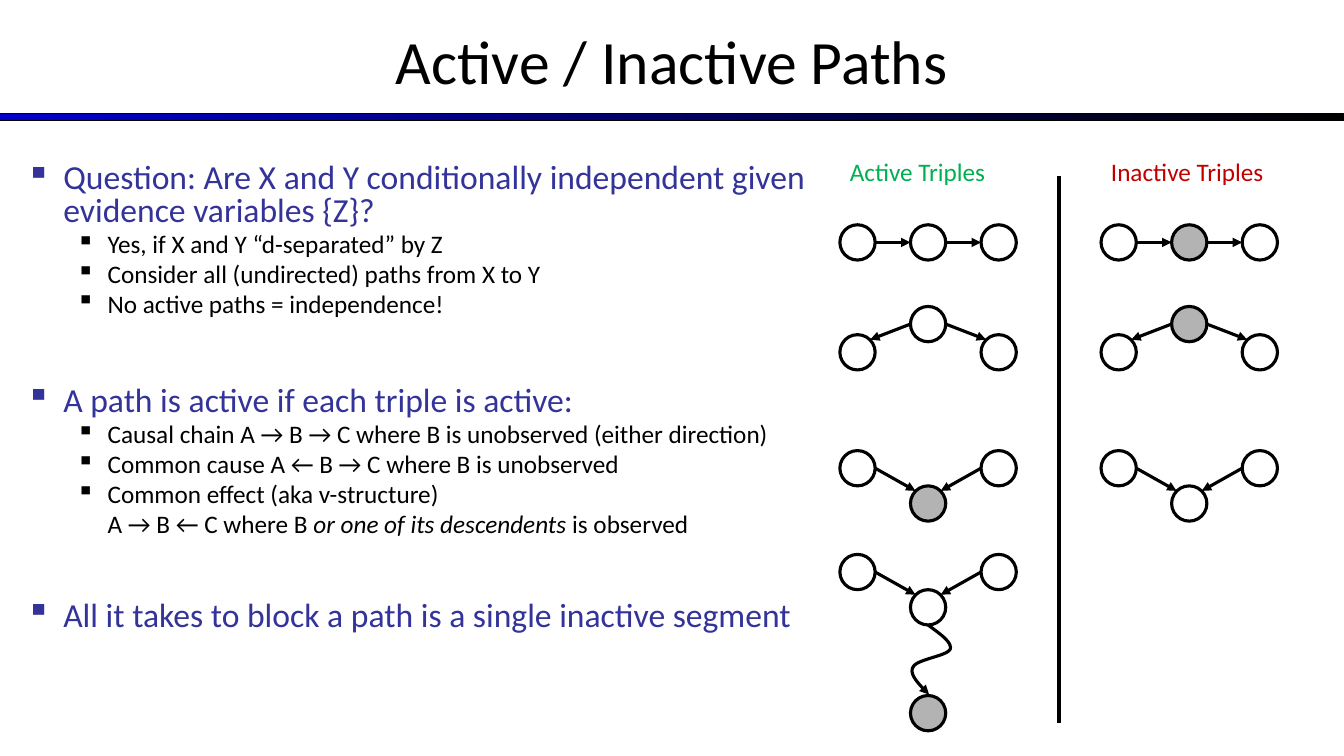
import dataclasses

import lxml.etree
import pptx
import pptx.dml.color
import pptx.enum.dml
import pptx.enum.shapes
import pptx.enum.text
import pptx.oxml
import pptx.oxml.ns
import pptx.util

SHAPE = pptx.enum.shapes.MSO_SHAPE
NODE, PITCH, CORNER = 35, 70, 5
ACTIVE_X, INACTIVE_X = 833, 1092


@dataclasses.dataclass(frozen=True)
class Theme:
    """Colours, font and type sizes of the slide."""
    font: str = "Calibri"
    black: str = "000000"
    white: str = "FFFFFF"
    blue: str = "0000CC"
    heading: str = "333399"
    observed: str = "B3B3B3"
    active: str = "00B050"
    inactive: str = "C00000"
    title_size: int = 44
    heading_size: int = 24
    text_size: int = 18


THEME = Theme()

BODY = [
    (0, "▪", 5, ["Question: Are X and Y conditionally independent given evidence variables {Z}?"]),
    (1, "▪", 4, ["Yes, if X and Y “d-separated” by Z"]),
    (1, "▪", 4, ["Consider all (undirected) paths from X to Y"]),
    (1, "▪", 4, ["No active paths = independence!"]),
    (0, "▪", 49, ["A path is active if each triple is active:"]),
    (1, "▪", 4, ["Causal chain A → B → C where B is unobserved (either direction)"]),
    (1, "▪", 4, ["Common cause A ← B → C where B is unobserved"]),
    (1, "▪", 4, ["Common effect (aka v-structure)"]),
    (1, None, 4, ["A → B ← C where B ", "or one of its descendents", " is observed"]),
    (0, "▪", 45, ["All it takes to block a path is a single inactive segment"]),
]


def px(n):
    """Turn px into EMU, at 100 px to the inch."""
    return pptx.util.Emu(round(n * 9144))


def rgb(color):
    """Return the colour object for a hex string."""
    return pptx.dml.color.RGBColor.from_string(color)


def add_run(p, text, size, color, italic=False):
    """Append one formatted run to a paragraph."""
    r = p.add_run()
    r.text = text
    r.font.name, r.font.size, r.font.italic = THEME.font, pptx.util.Pt(size), italic
    r.font.color.rgb = rgb(color)


def set_insets(tf):
    """Give a text frame wrapping and its even insets."""
    tf.word_wrap = True
    tf.margin_left = tf.margin_right = px(10)
    tf.margin_top = tf.margin_bottom = px(5)


def add_text_box(s, x, y, w, h):
    """Add a wrapping text box and return its frame."""
    tf = s.shapes.add_textbox(px(x), px(y), px(w), px(h)).text_frame
    set_insets(tf)
    return tf


def set_bullet(p, level, char):
    """Set the hanging indent and bullet of a paragraph."""
    margin, hang = ((37, 37), (81, 31))[level]
    ppr = p._p.get_or_add_pPr()
    ppr.set("marL", str(px(margin)))
    ppr.set("indent", str(-px(hang) if char else 0))
    tag = pptx.oxml.ns.qn("a:buChar" if char else "a:buNone")
    bullet = lxml.etree.SubElement(ppr, tag)
    if char:
        bullet.set("char", char)


def style_line(sp, width, arrow=False):
    """Draw a black shadowless line, with an arrowhead at its end if asked."""
    sp.line.color.rgb = rgb(THEME.black)
    sp.line.width = pptx.util.Pt(width)
    if arrow:
        tail = lxml.etree.SubElement(sp.line._get_or_add_ln(), pptx.oxml.ns.qn("a:tailEnd"))
        tail.set("type", "triangle")


def add_line(shapes, start, end, width=2.25, arrow=True):
    """Connect two points with a straight line."""
    c = shapes.add_connector(pptx.enum.shapes.MSO_CONNECTOR.STRAIGHT, *map(px, start + end))
    style_line(c, width, arrow)
    lxml.etree.SubElement(c._element.spPr, pptx.oxml.ns.qn("a:effectLst"))


def add_node(shapes, x, y, observed=False):
    """Add one graph node, grey when observed."""
    sp = shapes.add_shape(SHAPE.OVAL, px(x), px(y), px(NODE), px(NODE))
    sp.shadow.inherit = False
    sp.fill.solid()
    sp.fill.fore_color.rgb = rgb(THEME.observed if observed else THEME.white)
    style_line(sp, 2.25)


def add_triple(s, kind, x, end_y, mid_y, observed):
    """Add three nodes and their arrows as a group, and return its shapes."""
    shapes = s.shapes.add_group_shape().shapes
    for i, y in enumerate((end_y, mid_y, end_y)):
        add_node(shapes, x + i * PITCH, y, observed and i == 1)
    mid_x, right_x, half = x + PITCH, x + 2 * PITCH, NODE / 2
    left_side, right_side = (x + NODE, end_y + half), (right_x, end_y + half)
    mid_left, mid_right = (mid_x, mid_y + half), (mid_x + NODE, mid_y + half)
    if kind == "chain":
        arrows = [(left_side, mid_left), (mid_right, right_side)]
    elif kind == "fork":
        arrows = [(mid_left, (x + NODE - CORNER, end_y + CORNER)),
                  (mid_right, (right_x + CORNER, end_y + CORNER))]
    else:
        arrows = [(left_side, (mid_x + CORNER, mid_y + CORNER)),
                  (right_side, (mid_x + NODE - CORNER, mid_y + CORNER))]
    for start, end in arrows:
        add_line(shapes, start, end)
    return shapes


def bezier(points, t):
    """Return the point at t on a cubic curve."""
    weights = ((1 - t) ** 3, 3 * t * (1 - t) ** 2, 3 * t * t * (1 - t), t ** 3)
    return tuple(px(sum(w * pt[axis] for w, pt in zip(weights, points))) for axis in (0, 1))


def add_descendant(shapes, x, y):
    """Add an observed descendant under a node's bottom, joined by a wavy arrow."""
    bends = [(0, 0), (12, 9), (24, 17), (22, 24), (19, 31), (-12, 34), (-15, 42),
             (-19, 49), (-9, 59), (1, 69)]
    bends = [(x + dx, y + dy) for dx, dy in bends]
    wave = [bezier(bends[i:i + 4], k / 12) for i in (0, 3, 6) for k in range(1, 13)]
    builder = shapes.build_freeform(px(x), px(y), scale=1.0)
    builder.add_line_segments(wave, close=False)
    sp = builder.convert_to_shape()
    sp.shadow.inherit = False
    sp.fill.background()
    style_line(sp, 2.25, arrow=True)
    add_node(shapes, x - NODE / 2, y + 70, observed=True)


def add_header(s, x, y, w, h):
    """Place the title and the gradient rule beneath it."""
    rule = s.shapes.add_shape(SHAPE.RECTANGLE, px(x), px(y + 116), px(w), px(7))
    rule.shadow.inherit = False
    rule.fill.gradient()
    rule.fill.gradient_angle = 0
    for stop, color in zip(rule.fill.gradient_stops, (THEME.blue, THEME.black)):
        stop.color.rgb = rgb(color)
    style_line(rule, 0.75)
    title = s.shapes.title
    title.left, title.top, title.width, title.height = map(px, (x, y, w, h))
    tf = title.text_frame
    set_insets(tf)
    tf.vertical_anchor = pptx.enum.text.MSO_ANCHOR.MIDDLE
    p = tf.paragraphs[0]
    p.alignment = pptx.enum.text.PP_ALIGN.CENTER
    add_run(p, "Active / Inactive Paths", THEME.title_size, THEME.black)


def add_body(s, x, y, w, h):
    """Write the bulleted explanation."""
    tf = add_text_box(s, x, y, w, h)
    for i, (level, char, before, texts) in enumerate(BODY):
        p = tf.add_paragraph() if i else tf.paragraphs[0]
        p.level, p.line_spacing, p.space_before = level, 0.8, pptx.util.Pt(before)
        set_bullet(p, level, char)
        size, color = ((THEME.heading_size, THEME.heading), (THEME.text_size, THEME.black))[level]
        for k, text in enumerate(texts):
            add_run(p, text, size, color, italic=k == 1)


def add_column(s, x, y, w, label, color, active):
    """Add a labelled column of triples, and return the label's column left."""
    tf = add_text_box(s, x, y, w, 40)
    add_run(tf.paragraphs[0], label, THEME.text_size, color)
    add_triple(s, "chain", x, y + 73, y + 73, not active)
    add_triple(s, "fork", x, y + 182, y + 154, not active)
    add_triple(s, "collider", x, y + 297, y + 332, active)
    if active:
        shapes = add_triple(s, "collider", x, y + 400, y + 435, False)
        add_descendant(shapes, x + PITCH + NODE / 2, y + 435 + NODE)


def main():
    """Build and save the slide."""
    prs = pptx.Presentation()
    prs.slide_width, prs.slide_height = px(1333), px(750)
    s = prs.slides.add_slide(prs.slide_layouts[5])
    add_header(s, 0, -3, 1333, 125)
    add_body(s, 16, 158, 826, 550)
    add_column(s, ACTIVE_X, 150, 175, "Active Triples", THEME.active, True)
    add_column(s, INACTIVE_X, 150, 192, "Inactive Triples", THEME.inactive, False)
    add_line(s.shapes, (1050, 175), (1050, 717), width=3, arrow=False)
    prs.save("out.pptx")


if __name__ == "__main__":
    main()
